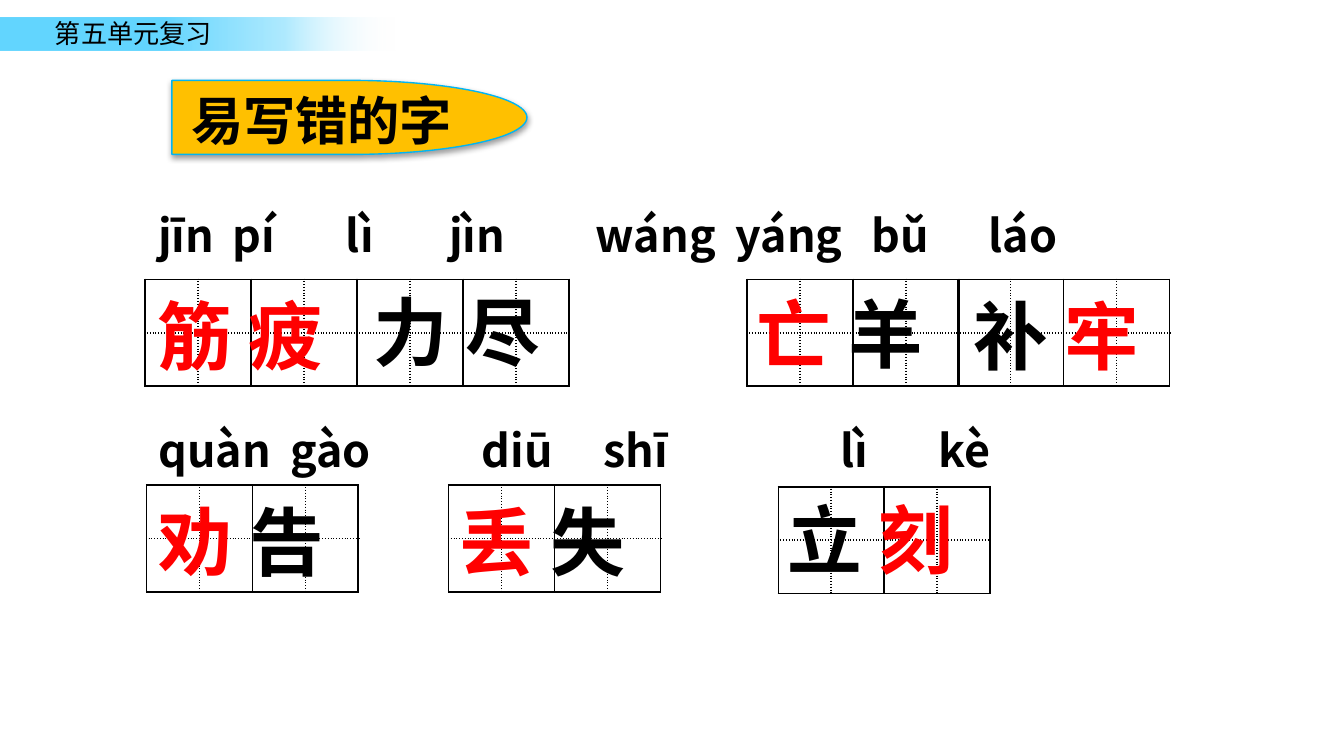
from dataclasses import dataclass

from lxml import etree
from pptx import Presentation
from pptx import oxml
from pptx import util as u
from pptx.dml.color import RGBColor
from pptx.enum import shapes, text
from pptx.oxml import ns


@dataclass(frozen=True)
class Theme:
    black: str = "000000"
    red: str = "FF0000"
    amber: str = "FFC000"
    blue: str = "00B5F4"
    sky: str = "63D6FF"
    pale: str = "97E4FF"
    white: str = "FFFFFF"
    hanzi: str = "Noto Sans CJK SC"
    latin: str = "Noto Sans CJK JP"
    header: int = 14
    pinyin: int = 24
    title: int = 28
    word: int = 40


theme = Theme()
Cm = u.Cm


def write(holder, place, spans, size, bold=True, font=theme.hanzi, wrap=False):
    """Add a one-paragraph text box made of (wording, colour) spans."""
    box = holder.add_textbox(*map(Cm, place))
    box.text_frame.word_wrap = wrap
    para = box.text_frame.paragraphs[0]
    look = {"size": u.Pt(size), "bold": bold, "name": font}
    for wording, colour in spans:
        span = para.add_run()
        span.text = wording
        for name, value in look.items():
            setattr(span.font, name, value)
        span.font.color.rgb = RGBColor.from_string(colour)
        east = etree.SubElement(span.font._element, ns.qn("a:ea"))
        east.set("typeface", font)
    return box


def draw_grid(left, top):
    """Add two writing squares, each quartered by dotted guide lines."""
    frame = page.shapes.add_table(2, 4, Cm(left), Cm(top), Cm(4), Cm(2.02))
    table = frame.table
    for name in ("first_row", "horz_banding"):
        setattr(table, name, False)
    for row in range(2):
        for column in range(4):
            cell = table.cell(row, column)
            for side in ("left", "right", "top", "bottom"):
                setattr(cell, f"margin_{side}", 0)
            cell.text_frame.paragraphs[0].font.size = u.Pt(8)
            dotted = {"L": column % 2 == 1, "R": column % 2 == 0,
                      "T": row == 1, "B": row == 0}
            borders = cell._tc.get_or_add_tcPr()
            for side, is_dotted in dotted.items():
                dash = "sysDot" if is_dotted else "solid"
                borders.append(oxml.parse_xml(
                    f'<a:ln{side} {ns.nsdecls("a")} w="12700"><a:solidFill>'
                    f'<a:srgbClr val="{theme.black}"/></a:solidFill>'
                    f'<a:prstDash val="{dash}"/></a:ln{side}>'))
            cell.fill.background()


deck = Presentation()
deck.slide_width, deck.slide_height = Cm(25.4), Cm(14.29)
page = deck.slides.add_slide(deck.slide_layouts[6])

# Header band fading to the right
band = page.shapes.add_shape(
    shapes.MSO_SHAPE.RECTANGLE, 0, Cm(0.34), Cm(7.7), Cm(0.61))
band.shadow.inherit = False
band.line.fill.background()
stops = "".join(
    f'<a:gs pos="{place}000"><a:srgbClr val="{colour}">'
    f'<a:alpha val="{alpha}000"/></a:srgbClr></a:gs>'
    for place, colour, alpha in (
        (40, theme.sky, 100), (70, theme.pale, 76), (97, theme.white, 0)))
band._element.spPr.find(ns.qn("a:prstGeom")).addnext(oxml.parse_xml(
    f'<a:gradFill {ns.nsdecls("a")}><a:gsLst>{stops}</a:gsLst>'
    '<a:lin ang="0" scaled="0"/></a:gradFill>'))
write(page.shapes, (0.79, 0.2, 3.48, 0.86),
      [("第五单元复习", theme.black)], theme.header, bold=False)

# Title badge
badge = page.shapes.add_group_shape()
plate = badge.shapes.add_shape(
    shapes.MSO_SHAPE.FLOWCHART_DELAY, Cm(3.25), Cm(1.52), Cm(6.71), Cm(1.4))
plate.fill.solid()
plate.fill.fore_color.rgb = RGBColor.from_string(theme.amber)
plate.line.color.rgb = RGBColor.from_string(theme.blue)
plate.line.width = u.Pt(0.75)
plate.shadow.inherit = False
plate._element.spPr.find(ns.qn("a:effectLst")).append(oxml.parse_xml(
    f'<a:outerShdw {ns.nsdecls("a")} blurRad="39370" dist="20320" '
    f'dir="5400000" rotWithShape="0"><a:srgbClr val="{theme.black}">'
    '<a:alpha val="38000"/></a:srgbClr></a:outerShdw>'))
title = write(badge.shapes, (2.97, 1.57, 6.22, 1.4),
              [("易写错的字", theme.black)], theme.title, wrap=True)
frame_look = {"margin_left": Cm(0.18), "margin_right": Cm(0.18),
              "margin_top": Cm(0.1), "margin_bottom": Cm(0.1)}
for name, value in frame_look.items():
    setattr(title.text_frame, name, value)
title.text_frame.paragraphs[0].alignment = text.PP_ALIGN.CENTER

# Pinyin lines, each syllable on its own tab stop
pinyin_lines = [
    (3.81, "jīn pí lì jìn wáng yáng bǔ láo",
     (1.4, 3.55, 5.5, 8.27, 10.92, 13.48, 15.7)),
    (7.87, "quàn gào diū shī lì kè", (2.5, 6.12, 8.42, 12.9, 14.75)),
]
for top, syllables, tabs in pinyin_lines:
    line = write(page.shapes, (2.74, top, 18.16, 1.27),
                 [("\t".join(syllables.split()), theme.black)],
                 theme.pinyin, font=theme.latin, wrap=True)
    para = line.text_frame.paragraphs[0]
    tab_list = etree.SubElement(para._p.get_or_add_pPr(), ns.qn("a:tabLst"))
    for tab in tabs:
        etree.SubElement(tab_list, ns.qn("a:tab"), pos=str(Cm(tab)), algn="l")

# Writing squares with their words: grid corner, word corner, spans
words = [
    (2.74, 5.28, 2.72, 5.36, [("筋 疲", theme.red)]),
    (6.75, 5.28, 6.81, 5.28, [("力 尽", theme.black)]),
    (14.12, 5.28, 14.05, 5.31, [("亡", theme.red), (" 羊", theme.black)]),
    (18.1, 5.28, 18.14, 5.36, [("补 ", theme.black), ("牢", theme.red)]),
    (2.77, 9.17, 2.74, 9.25, [("劝", theme.red), (" 告", theme.black)]),
    (8.48, 9.17, 8.43, 9.25, [("丢", theme.red), (" 失", theme.black)]),
    (14.71, 9.2, 14.63, 9.22, [("立 ", theme.black), ("刻", theme.red)]),
]
for grid_left, grid_top, left, top, spans in words:
    draw_grid(grid_left, grid_top)
    write(page.shapes, (left, top, 4.06, 1.96), spans, theme.word)

deck.save("out.pptx")
